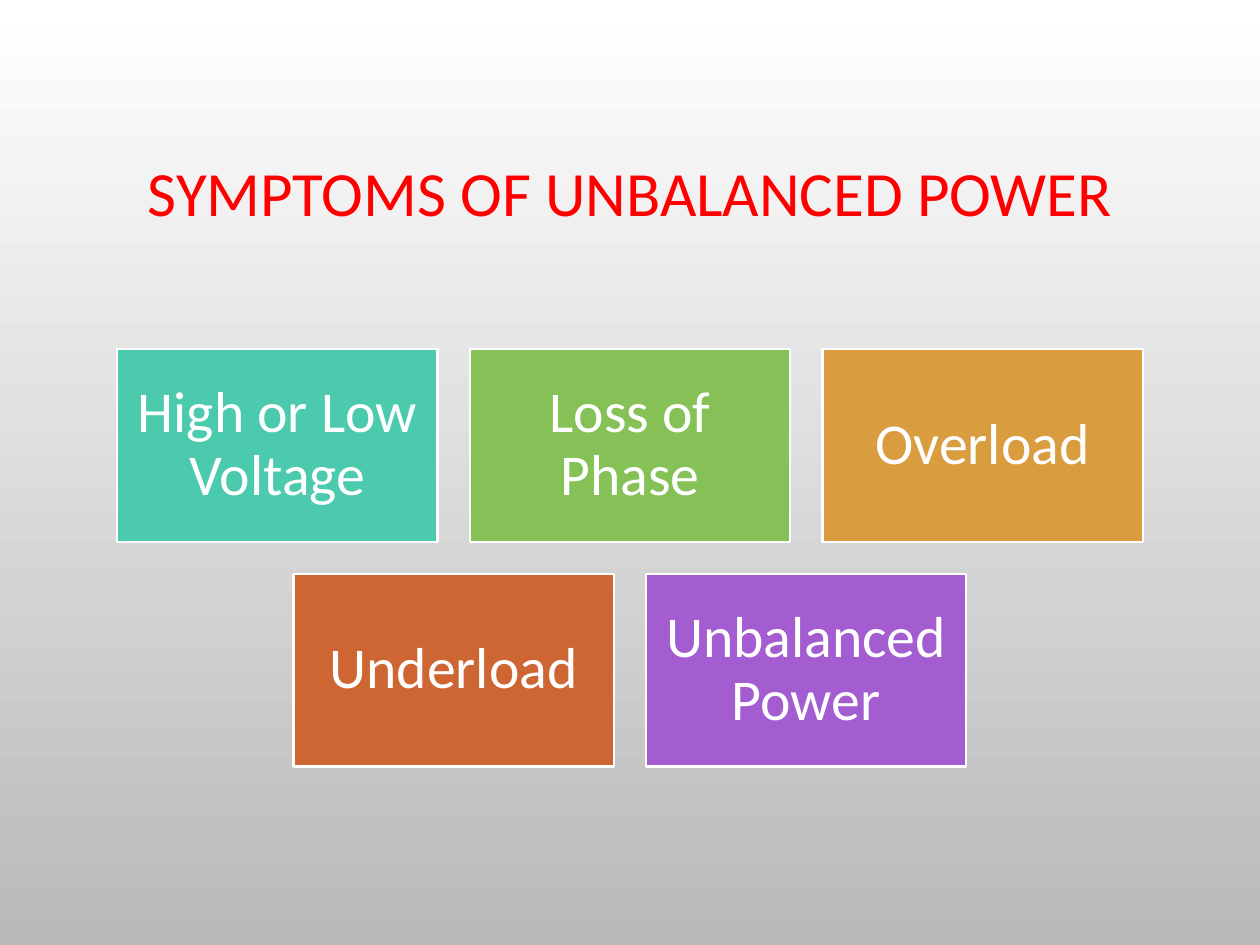
from pptx import Presentation
from pptx.dml.color import RGBColor
from pptx.enum.shapes import MSO_SHAPE
from pptx.enum.text import MSO_ANCHOR, PP_ALIGN
from pptx.util import Pt

RECTANGLE = MSO_SHAPE.RECTANGLE
MIDDLE = MSO_ANCHOR.MIDDLE
CENTER = PP_ALIGN.CENTER

WHITE = RGBColor(0xFF, 0xFF, 0xFF)
GRAY = RGBColor(0xB9, 0xB9, 0xB9)
RED = RGBColor(0xFF, 0x00, 0x00)
TEAL = RGBColor(0x4B, 0xCA, 0xAD)
GREEN = RGBColor(0x86, 0xC1, 0x57)
AMBER = RGBColor(0xD9, 0x9C, 0x3F)
ORANGE = RGBColor(0xCE, 0x66, 0x33)
PURPLE = RGBColor(0xA3, 0x5D, 0xD1)

TITLE = "SYMPTOMS OF UNBALANCED POWER"
SYMPTOM_ROWS = [
    [("High or Low Voltage", TEAL), ("Loss of Phase", GREEN), ("Overload", AMBER)],
    [("Underload", ORANGE), ("Unbalanced Power", PURPLE)],
]

SLIDE_WIDTH, SLIDE_HEIGHT = 720, 540
CARD_WIDTH, CARD_HEIGHT, CARD_GAP = 183, 110, 18.5
CARDS_TOP = 199.5


def write_text(shape, text, *, size, color, side_margin, end_margin):
    frame = shape.text_frame
    frame.word_wrap = True
    frame.vertical_anchor = MIDDLE
    frame.margin_left = frame.margin_right = Pt(side_margin)
    frame.margin_top = frame.margin_bottom = Pt(end_margin)
    paragraph = frame.paragraphs[0]
    paragraph.text = text
    paragraph.alignment = CENTER
    paragraph.line_spacing = 0.9
    paragraph.font.name = "Calibri"
    paragraph.font.size = Pt(size)
    paragraph.font.color.rgb = color


def add_card(slide, left, top, text, fill_color):
    card = slide.shapes.add_shape(
        RECTANGLE, Pt(left), Pt(top), Pt(CARD_WIDTH), Pt(CARD_HEIGHT))
    card.shadow.inherit = False
    card.fill.solid()
    card.fill.fore_color.rgb = fill_color
    card.line.color.rgb = WHITE
    card.line.width = Pt(1.25)
    write_text(card, text, size=33, color=WHITE, side_margin=10, end_margin=10)


def main():
    presentation = Presentation()
    presentation.slide_width = Pt(SLIDE_WIDTH)
    presentation.slide_height = Pt(SLIDE_HEIGHT)
    slide = presentation.slides.add_slide(presentation.slide_layouts[6])

    background = slide.background.fill
    background.gradient()
    background.gradient_angle = 270
    for stop, position, color in zip(background.gradient_stops, (0, 1), (WHITE, GRAY)):
        stop.position = position
        stop.color.rgb = color

    title = slide.shapes.add_textbox(Pt(54), Pt(49), Pt(612), Pt(126))
    write_text(title, TITLE, size=36, color=RED, side_margin=7.2, end_margin=3.6)

    for row_index, row in enumerate(SYMPTOM_ROWS):
        row_width = len(row) * (CARD_WIDTH + CARD_GAP) - CARD_GAP
        row_left = (SLIDE_WIDTH - row_width) / 2
        top = CARDS_TOP + row_index * (CARD_HEIGHT + CARD_GAP)
        for column, (text, color) in enumerate(row):
            left = row_left + column * (CARD_WIDTH + CARD_GAP)
            add_card(slide, left, top, text, color)

    presentation.save("out.pptx")


if __name__ == "__main__":
    main()
